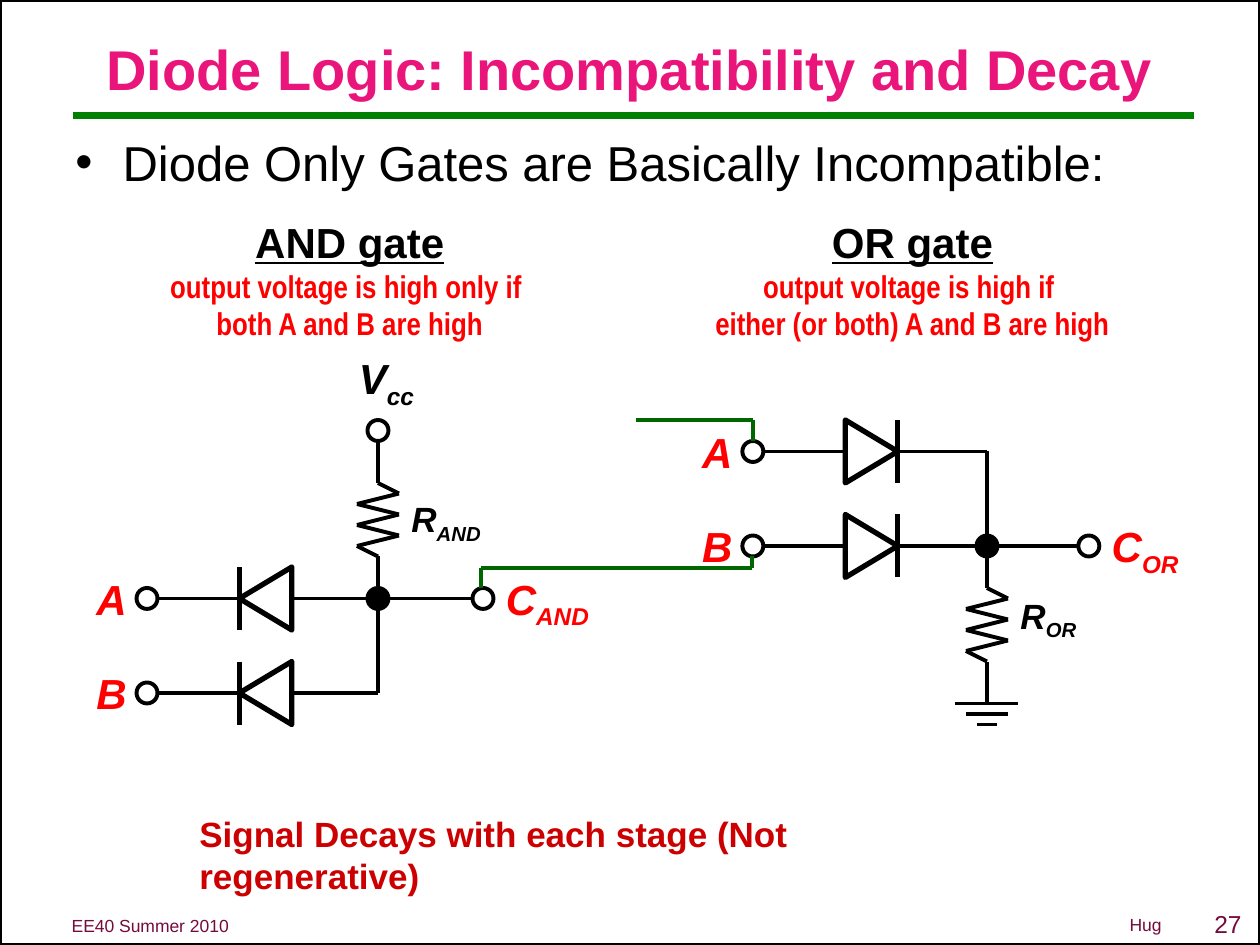
import pptx
import pptx.util
import pptx.dml.color
import pptx.enum.shapes
import pptx.enum.text
import pptx.oxml.ns
import lxml.etree

RGBColor = pptx.dml.color.RGBColor
BLACK = RGBColor(0x00, 0x00, 0x00)
RED = RGBColor(0xFF, 0x00, 0x00)
DARK_RED = RGBColor(0xCC, 0x00, 0x00)
PINK = RGBColor(0xEA, 0x15, 0x7A)
PLUM = RGBColor(0x75, 0x0B, 0x3D)
GREEN = RGBColor(0x00, 0x80, 0x00)
LINK_GREEN = RGBColor(0x00, 0x66, 0x00)

SHAPES = pptx.enum.shapes.MSO_SHAPE
ALIGN = pptx.enum.text.PP_ALIGN
ANCHOR = pptx.enum.text.MSO_ANCHOR
Pt = pptx.util.Pt
qn = pptx.oxml.ns.qn

# The slide is a grid of 120 columns by 90 rows, 12 cells to the inch.
COLUMNS, ROWS = 120, 90
CELL = pptx.util.Inches(1) / 12

presentation = pptx.Presentation()
presentation.slide_width = round(COLUMNS * CELL)
presentation.slide_height = round(ROWS * CELL)
slide = presentation.slides.add_slide(presentation.slide_layouts[6])
shapes = slide.shapes


def write(box, paragraphs, align=ALIGN.LEFT, anchor=ANCHOR.TOP, wrap=False):
    """Add a text box; a run is (text, size, colour, style), where style
    letters are b bold, i italic, u underline, s subscript, n narrow."""
    text_box = shapes.add_textbox(*(round(length * CELL) for length in box))
    frame = text_box.text_frame
    frame.word_wrap = wrap
    frame.vertical_anchor = anchor
    for index, runs in enumerate(paragraphs):
        paragraph = frame.add_paragraph() if index else frame.paragraphs[0]
        paragraph.alignment = align
        for text, size, colour, style in runs:
            run = paragraph.add_run()
            run.text = text
            run.font.size = Pt(size)
            run.font.name = "Arial Narrow" if "n" in style else "Arial"
            run.font.color.rgb = colour
            run.font.bold = "b" in style
            run.font.italic = "i" in style
            run.font.underline = "u" in style
            if "s" in style:
                run._r.get_or_add_rPr().set("baseline", "-25000")
    return frame


def wire(*points, colour=BLACK, width=2.25):
    """Join successive grid points with straight lines."""
    for start, end in zip(points, points[1:]):
        line = shapes.add_connector(
            pptx.enum.shapes.MSO_CONNECTOR.STRAIGHT,
            *(round(length * CELL) for length in (*start, *end)))
        line.line.color.rgb = colour
        line.line.width = Pt(width)
        lxml.etree.SubElement(line._element.spPr, qn("a:effectLst"))


# Frame, title and footer
border = shapes.add_shape(SHAPES.RECTANGLE, 0, 0,
                          presentation.slide_width, presentation.slide_height)
border.shadow.inherit = False
border.fill.background()
border.line.color.rgb = BLACK
border.line.width = Pt(2.25)
wire((7, 11), (113.67, 11), colour=GREEN, width=4.5)
write((6, 3, 108, 7), [[("Diode Logic: Incompatibility and Decay", 32, PINK, "b")]],
      ALIGN.CENTER, ANCHOR.MIDDLE, True)
write((113.9, 85.9, 6.1, 4.1), [[("27", 14, PLUM, "")]],
      ALIGN.CENTER, ANCHOR.MIDDLE, True)
write((5.65, 86.6, 17.5, 3.2), [[("EE40 Summer 2010", 10, PLUM, "")]])
write((106.4, 86.5, 5.5, 3.2), [[("Hug", 10, PLUM, "")]])

# Bulleted statement
statement = write((6, 12, 108, 10.5),
                  [[("Diode Only Gates are Basically Incompatible:", 28, BLACK, "")]],
                  wrap=True).paragraphs[0]
statement.space_before = Pt(4)
properties = statement._p.get_or_add_pPr()
indent = round(4.5 * CELL)
properties.set("marL", str(indent))
properties.set("indent", str(-indent))
lxml.etree.SubElement(properties, qn("a:buFont")).set("typeface", "Arial")
lxml.etree.SubElement(properties, qn("a:buChar")).set("char", "•")

# Gate headings
for left, width, gate, first, second in [
    (15, 36.6, "AND gate", "output voltage is high only if ", "both A and B are high"),
    (66.8, 40.2, "OR gate", "output voltage is high if ", "either (or both) A and B are high"),
]:
    write((left, 20, width, 13.2),
          [[(gate, 24, BLACK, "bu")], [(first, 18, RED, "bn")], [(second, 18, RED, "bn")]],
          ALIGN.CENTER)

# Each gate: name, input column, two input rows, diode base and tip columns,
# junction column and row, output column, resistor top row, resistor label box
GATES = [
    ("AND", 14, (57, 66), 27.8, 22.8, 36, 57, 46, 42, (38, 46.8, 12.1, 5.2)),
    ("OR", 71.7, (43, 52), 80.5, 85.5, 94, 52, 103.7, 52, (96, 56, 9.2, 5.2)),
]
ZIGZAG = [(0, 0), (0, 4), (2, 5), (-2, 6), (2, 7), (-2, 8), (2, 9), (-2, 10),
          (0, 11), (0, 15)]
terminals = [(36, 41, False)]

for (gate, input_x, input_rows, base, tip, junction_x, junction_y,
     output_x, resistor_y, label_box) in GATES:
    for letter, row in zip("AB", input_rows):
        wire((input_x + 1, row), (min(base, tip), row))
        wire((max(base, tip), row), (junction_x, row))
        wire((tip, row - 3), (tip, row + 3), width=3)
        diode = shapes.add_shape(
            SHAPES.ISOSCELES_TRIANGLE,
            round(((base + tip) / 2 - 3) * CELL), round((row - 2.5) * CELL),
            round(6 * CELL), round(5 * CELL))
        diode.rotation = 90 if tip > base else 270
        diode.shadow.inherit = False
        diode.fill.background()
        diode.line.color.rgb = BLACK
        diode.line.width = Pt(3)
        terminals.append((input_x, row, False))
        write((input_x - 6, row - 3, 5.3, 6), [[(letter, 24, RED, "bi")]])
    wire(*((junction_x, row) for row in input_rows))
    wire((junction_x, junction_y), (output_x - 1, junction_y))
    wire(*((junction_x + x, resistor_y + y) for x, y in ZIGZAG))
    terminals += [(output_x, junction_y, False), (junction_x, junction_y, True)]
    write(label_box, [[("R", 20, BLACK, "bi"), (gate, 20, BLACK, "bis")]])
    write((output_x + 1, junction_y - 3, 11 if gate == "AND" else 9.4, 6),
          [[("C", 24, RED, "bi"), (gate, 24, RED, "bis")]])

write((33, 33, 8, 6), [[("V", 24, BLACK, "bi"), ("cc", 24, BLACK, "bis")]])

# Ground symbol under the OR resistor
for step in range(3):
    half = 3 - step
    wire((94 - half, 67 + step), (94 + half, 67 + step))

# Terminals and junction dots
for x, y, solid in terminals:
    dot = shapes.add_shape(SHAPES.OVAL, round((x - 1) * CELL), round((y - 1) * CELL),
                           round(2 * CELL), round(2 * CELL))
    dot.shadow.inherit = False
    if solid:
        dot.fill.solid()
        dot.fill.fore_color.rgb = BLACK
    else:
        dot.fill.background()
    dot.line.color.rgb = BLACK
    dot.line.width = Pt(2.25)

# Links between the stages
wire((45.85, 56), (45.85, 54.1), (71.6, 54.1), (71.6, 53), colour=LINK_GREEN)
wire((60.6, 40), (71.7, 40), (71.7, 42), colour=LINK_GREEN)

write((17.8, 76.8, 80.1, 9.2),
      [[("Signal Decays with each stage (Not regenerative)", 20, DARK_RED, "b")]],
      wrap=True)

presentation.save("out.pptx")
